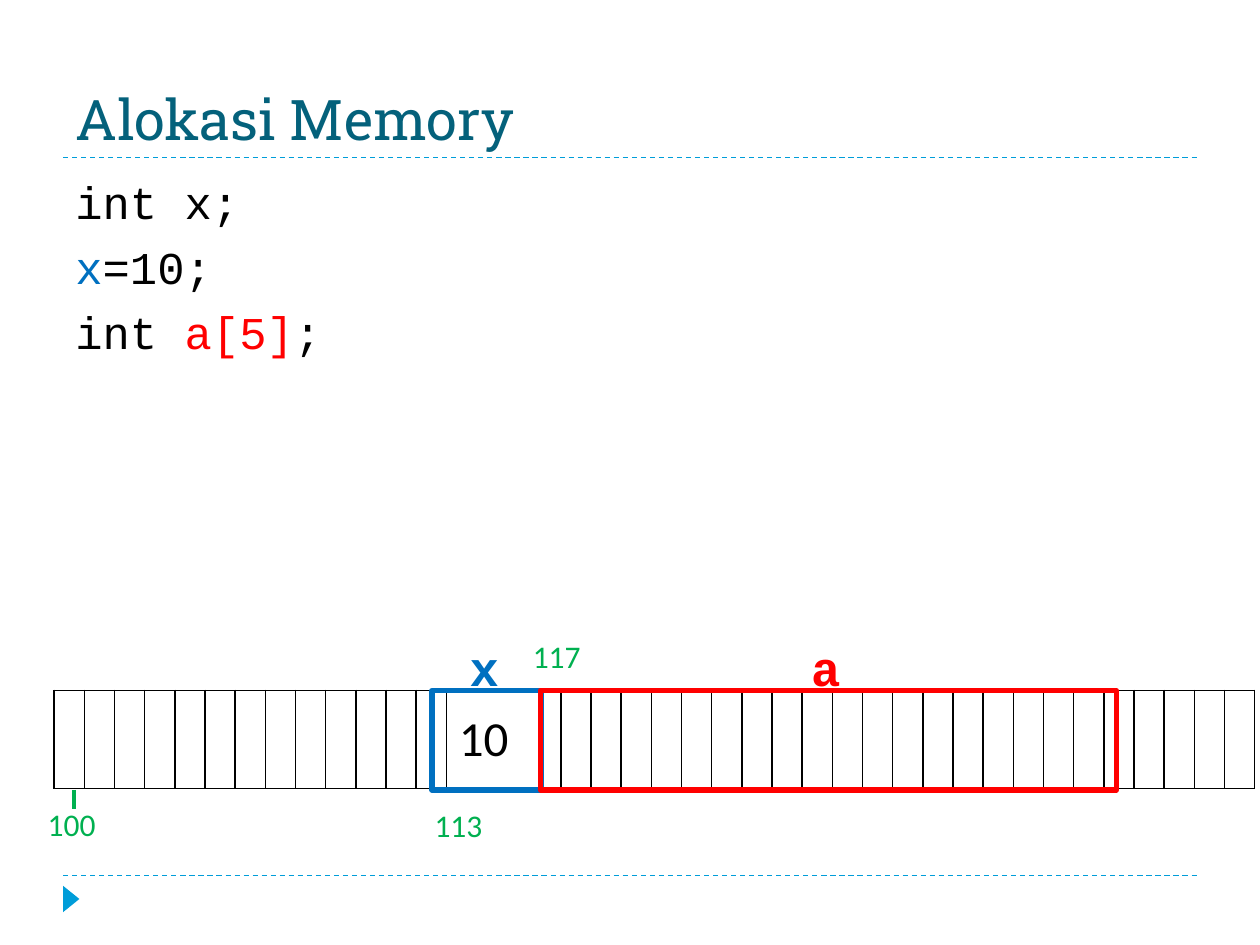
from lxml import etree
from pptx import Presentation
from pptx.dml.color import RGBColor
from pptx.enum.dml import MSO_LINE
from pptx.enum.shapes import MSO_CONNECTOR, MSO_SHAPE
from pptx.enum.text import MSO_ANCHOR, MSO_AUTO_SIZE
from pptx.oxml.ns import qn
from pptx.util import Inches, Pt

DASH = MSO_LINE.DASH
STRAIGHT = MSO_CONNECTOR.STRAIGHT
RECT, ARROW = MSO_SHAPE.RECTANGLE, MSO_SHAPE.ISOSCELES_TRIANGLE
TOP, MIDDLE, BOTTOM = MSO_ANCHOR.TOP, MSO_ANCHOR.MIDDLE, MSO_ANCHOR.BOTTOM
FIT = MSO_AUTO_SIZE.SHAPE_TO_FIT_TEXT

SKY = RGBColor(0x00, 0x9D, 0xD9)
TEAL = RGBColor(0x04, 0x61, 0x7B)
BLUE = RGBColor(0x00, 0x70, 0xC0)
RED = RGBColor(0xFF, 0x00, 0x00)
GREEN = RGBColor(0x00, 0xB0, 0x50)
BLACK = RGBColor(0x00, 0x00, 0x00)
SANS, MONO, SLAB = "Calibri", "Courier New", "Roboto Slab"

TITLE = "Alokasi Memory"
CODE = [
    [("int x;", BLACK)],
    [("x", BLUE), ("=10;", BLACK)],
    [("int ", BLACK), ("a[5]", RED), (";", BLACK)],
]
VALUE, SLOT, CELLS = "10", 13, 37
NARROW, WIDE = 0.23, 0.91
LEFT, ROW, HIGH = 0.43, 5.48, 0.78
RULES = [1.25, 6.95]
FRAMES = [(3.43, 0.87, BLUE), (4.29, 4.57, RED)]
MARKS = [("100", 0.28, 6.34), ("113", 3.35, 6.35), ("117", 4.13, 5.01)]
NAMES = [("x", 3.63, BLUE), ("a", 6.34, RED)]


def add_run(para, text, font, size, color, bold=False):
    run = para.add_run()
    run.text = text
    run.font.name = font
    run.font.size = Pt(size)
    run.font.bold = bold
    run.font.color.rgb = color


def add_box(slide, x, y, w, h, wrap=True, anchor=TOP):
    frame = slide.shapes.add_textbox(*map(Inches, (x, y, w, h))).text_frame
    frame.word_wrap = wrap
    frame.vertical_anchor = anchor
    if not wrap:
        frame.auto_size = FIT
    return frame


def add_line(slide, x1, y1, x2, y2, color, width, dash=None):
    line = slide.shapes.add_connector(STRAIGHT, *map(Inches, (x1, y1, x2, y2)))
    line.line.color.rgb = color
    line.line.width = Pt(width)
    if dash:
        line.line.dash_style = dash
    etree.SubElement(line._element.spPr, qn("a:effectLst"))


def add_edges(cell):
    props = cell._tc.get_or_add_tcPr()
    for spot, side in enumerate(("a:lnL", "a:lnR", "a:lnT", "a:lnB")):
        edge = etree.Element(qn(side), w=str(Pt(1)))
        fill = etree.SubElement(edge, qn("a:solidFill"))
        etree.SubElement(fill, qn("a:srgbClr"), val=str(BLACK))
        props.insert(spot, edge)


def add_memory(slide):
    widths = [WIDE if i == SLOT else NARROW for i in range(CELLS)]
    table = slide.shapes.add_table(
        1, CELLS, *map(Inches, (LEFT, ROW, sum(widths), HIGH))).table
    table.first_row = table.horz_banding = False
    for i, width in enumerate(widths):
        table.columns[i].width = Inches(width)
        cell = table.cell(0, i)
        cell.fill.background()
        add_edges(cell)
    cell = table.cell(0, SLOT)
    cell.vertical_anchor = MIDDLE
    add_run(cell.text_frame.paragraphs[0], VALUE, SANS, 28, BLACK)


def main():
    deck = Presentation()
    deck.slide_width, deck.slide_height = Inches(10), Inches(7.5)
    slide = deck.slides.add_slide(deck.slide_layouts[6])

    for y in RULES:
        add_line(slide, 0.5, y, 9.5, y, SKY, 0.75, DASH)
    arrow = slide.shapes.add_shape(ARROW, *map(Inches, (0.46, 7.07, 0.21, 0.13)))
    arrow.rotation = 90
    arrow.shadow.inherit = False
    arrow.fill.solid()
    arrow.fill.fore_color.rgb = SKY
    arrow.line.fill.background()

    title = add_box(slide, 0.5, 0.17, 9, 1.08, anchor=BOTTOM)
    add_run(title.paragraphs[0], TITLE, SLAB, 32, TEAL)

    body = add_box(slide, 0.5, 1.33, 9, 5.4)
    for i, parts in enumerate(CODE):
        para = body.add_paragraph() if i else body.paragraphs[0]
        para.space_before = Pt(6)
        for text, color in parts:
            add_run(para, text, MONO, 26, color)

    add_memory(slide)
    add_line(slide, 0.59, 6.27, 0.59, 6.42, GREEN, 2.25)
    for x, w, color in FRAMES:
        frame = slide.shapes.add_shape(RECT, *map(Inches, (x, ROW, w, 0.79)))
        frame.shadow.inherit = False
        frame.fill.background()
        frame.line.color.rgb = color
        frame.line.width = Pt(3)
    for text, x, y in MARKS:
        mark = add_box(slide, x, y, 0.59, 0.4, wrap=False)
        add_run(mark.paragraphs[0], text, SANS, 18, GREEN)
    for text, x, color in NAMES:
        name = add_box(slide, x, 5.01, 0.44, 0.57, wrap=False)
        add_run(name.paragraphs[0], text, MONO, 28, color, bold=True)

    deck.save("out.pptx")


if __name__ == "__main__":
    main()
